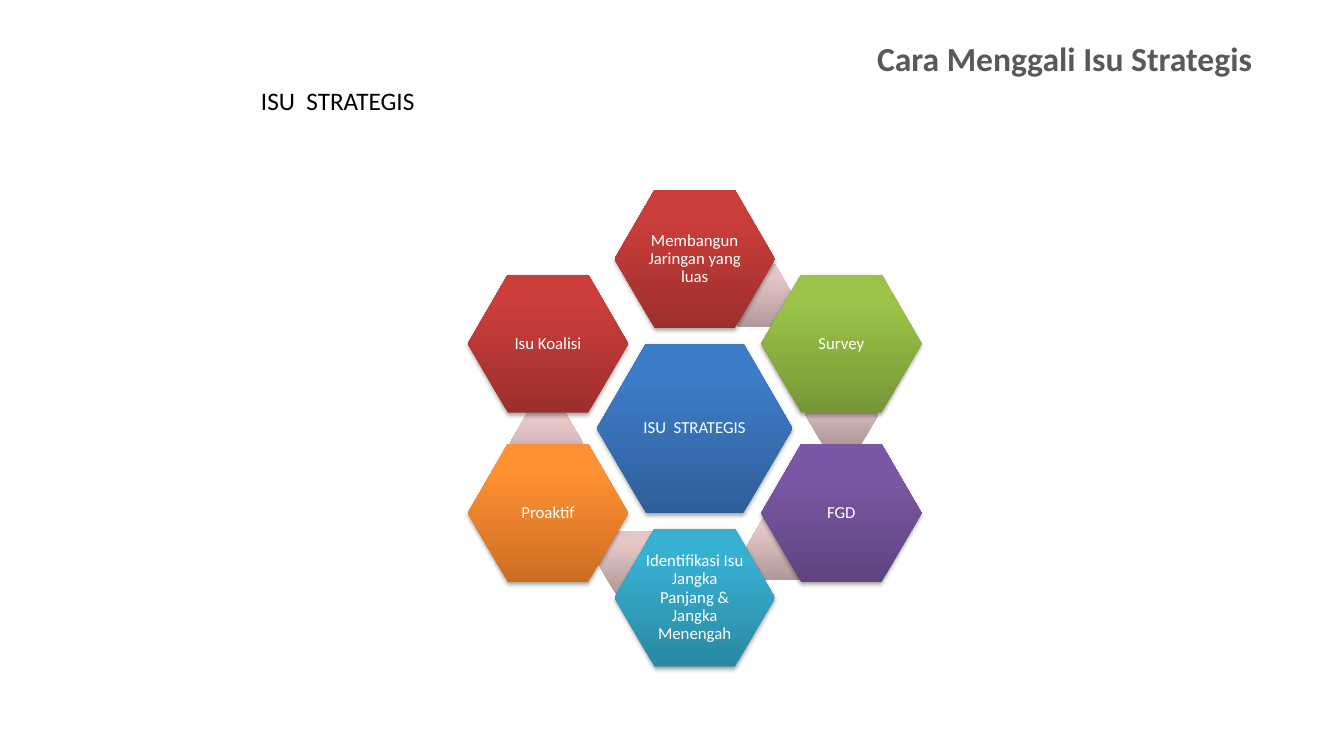
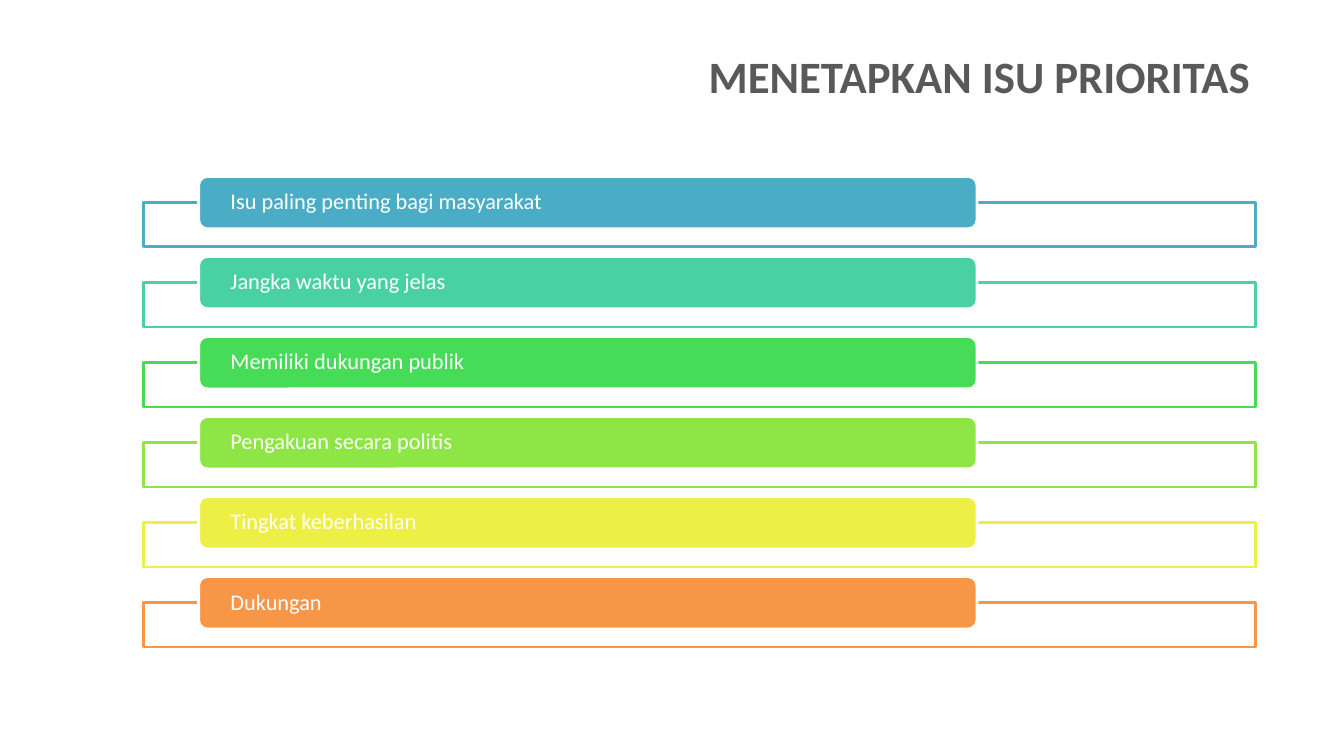
import math

from lxml import etree
from pptx import Presentation
from pptx import util as u
from pptx.dml.color import RGBColor
from pptx.enum import shapes, text
from pptx.oxml import ns

FONT = "Calibri"
COLORS = {
    "title": "595959", "black": "000000", "white": "FFFFFF",
    "teal": "4BACC6", "mint": "49D1A3", "green": "47DC57",
    "lime": "8DE646", "yellow": "EEEF46", "orange": "F79646",
}
# Each gradient runs from the bottom colour to the top colour.
GRADIENTS = {
    "blue": ("2F5F99", "3D7CC7"), "red": ("9C2F2D", "CB3E3A"),
    "olive": ("779737", "9BC348"), "purple": ("5F4480", "7B58A6"),
    "cyan": ("2A88A2", "37B1D2"), "amber": ("CC6E20", "FF9034"),
    "link": ("B09998", "E5C6C6"),
}

HUB = "ISU  STRATEGIS"
# Clockwise from the top: label, gradient, centre of the link to the next one
METHODS = [
    ("Membangun Jaringan yang luas", "red", (7.5, 2.93)),
    ("Survey", "olive", (8.35, 4.11)),
    ("FGD", "purple", (7.76, 5.44)),
    ("Identifikasi Isu Jangka Panjang & Jangka Menengah", "cyan", (6.29, 5.58)),
    ("Proaktif", "amber", (5.42, 4.4)),
    ("Isu Koalisi", "red", None),
]
HUB_CENTER, RING_RADIUS = (6.89, 4.25), 1.68
HUB_SIZE, METHOD_SIZE, LINK_SIZE = (1.94, 1.68), (1.59, 1.37), (0.73, 0.63)

PRIORITIES = [
    ("Isu paling penting bagi masyarakat", "teal"),
    ("Jangka waktu yang jelas", "mint"),
    ("Memiliki dukungan publik", "green"),
    ("Pengakuan secara politis", "lime"),
    ("Tingkat keberhasilan", "yellow"),
    ("Dukungan", "orange"),
]
FIRST_TOP, LAST_TOP, FRAME_DROP = 1.75, 5.72, 0.26


def rgb(name):
    return RGBColor.from_string(COLORS[name])


def set_font(paragraph, size, color, bold=False):
    font = paragraph.font
    font.name, font.size, font.bold = FONT, u.Pt(size), bold
    font.color.rgb = rgb(color)


def add_text(slide, box, words, size, color, bold=False, wrap=True):
    frame = slide.shapes.add_textbox(*map(u.Inches, box)).text_frame
    frame.word_wrap = wrap
    if not wrap:
        frame.auto_size = text.MSO_AUTO_SIZE.SHAPE_TO_FIT_TEXT
    frame.text = words
    set_font(frame.paragraphs[0], size, color, bold)


def add_title(slide, box, words, size):
    add_text(slide, box, words, size, "title", bold=True)


def add_block(slide, preset, box):
    block = slide.shapes.add_shape(preset, *map(u.Inches, box))
    block.shadow.inherit = False
    return block


def label(block, words, size, align, side, edge):
    frame = block.text_frame
    frame.word_wrap = True
    frame.vertical_anchor = text.MSO_ANCHOR.MIDDLE
    frame.margin_left = frame.margin_right = u.Inches(side)
    frame.margin_top = frame.margin_bottom = u.Inches(edge)
    frame.text = words
    paragraph = frame.paragraphs[0]
    paragraph.alignment, paragraph.line_spacing = align, 0.9
    set_font(paragraph, size, "white")


def cast_shadow(block):
    effects = block.element.spPr.find(ns.qn("a:effectLst"))
    shadow = etree.SubElement(
        effects, ns.qn("a:outerShdw"), blurRad=str(u.Pt(3.1)),
        dist=str(u.Pt(1.8)), dir="5400000", rotWithShape="0")
    color = etree.SubElement(shadow, ns.qn("a:srgbClr"), val=COLORS["black"])
    etree.SubElement(color, ns.qn("a:alpha"), val="35000")


def add_hexagon(slide, center, size, gradient, words=None):
    (x, y), (width, height) = center, size
    hexagon = add_block(slide, shapes.MSO_SHAPE.HEXAGON,
                        (x - width / 2, y - height / 2, width, height))
    hexagon.adjustments[0] = 0.29
    hexagon.line.fill.background()
    hexagon.fill.gradient()
    hexagon.fill.gradient_angle = 90
    stops = zip(hexagon.fill.gradient_stops, GRADIENTS[gradient], (0, 0.8))
    for stop, color, position in stops:
        stop.color.rgb = RGBColor.from_string(color)
        stop.position = position
    if words:
        cast_shadow(hexagon)
        label(hexagon, words, 12, text.PP_ALIGN.CENTER, 0.02, 0.02)


def build_methods(slide):
    add_title(slide, (8.6, 0.33, 4.15, 0.47), "Cara Menggali Isu Strategis", 24)
    add_hexagon(slide, HUB_CENTER, HUB_SIZE, "blue", HUB)
    for i, (words, gradient, link_center) in enumerate(METHODS):
        if link_center:
            add_hexagon(slide, link_center, LINK_SIZE, "link")
        angle = math.tau * i / len(METHODS)
        center = (HUB_CENTER[0] + RING_RADIUS * math.sin(angle),
                  HUB_CENTER[1] - RING_RADIUS * math.cos(angle))
        add_hexagon(slide, center, METHOD_SIZE, gradient, words)
    add_text(slide, (2.49, 0.8, 1.74, 0.4), HUB, 18, "black", wrap=False)


def build_priorities(slide):
    add_title(slide, (6.93, 0.43, 5.77, 0.47), "MENETAPKAN ISU PRIORITAS", 32)
    pitch = (LAST_TOP - FIRST_TOP) / (len(PRIORITIES) - 1)
    for i, (words, color) in enumerate(PRIORITIES):
        top = FIRST_TOP + i * pitch
        frame = add_block(slide, shapes.MSO_SHAPE.RECTANGLE,
                          (1.42, top + FRAME_DROP, 11.03, 0.44))
        bar = add_block(slide, shapes.MSO_SHAPE.ROUNDED_RECTANGLE,
                        (1.97, top, 7.72, 0.52))
        for block, fill, line in ((frame, "white", color), (bar, color, "white")):
            block.fill.solid()
            block.fill.fore_color.rgb = rgb(fill)
            block.line.color.rgb = rgb(line)
            block.line.width = u.Pt(2)
        label(bar, words, 16, text.PP_ALIGN.LEFT, 0.29, 0)


def main():
    deck = Presentation()
    deck.slide_width, deck.slide_height = u.Inches(13.33), u.Inches(7.5)
    for build in (build_methods, build_priorities):
        build(deck.slides.add_slide(deck.slide_layouts[6]))
    deck.save("out.pptx")


if __name__ == "__main__":
    main()
